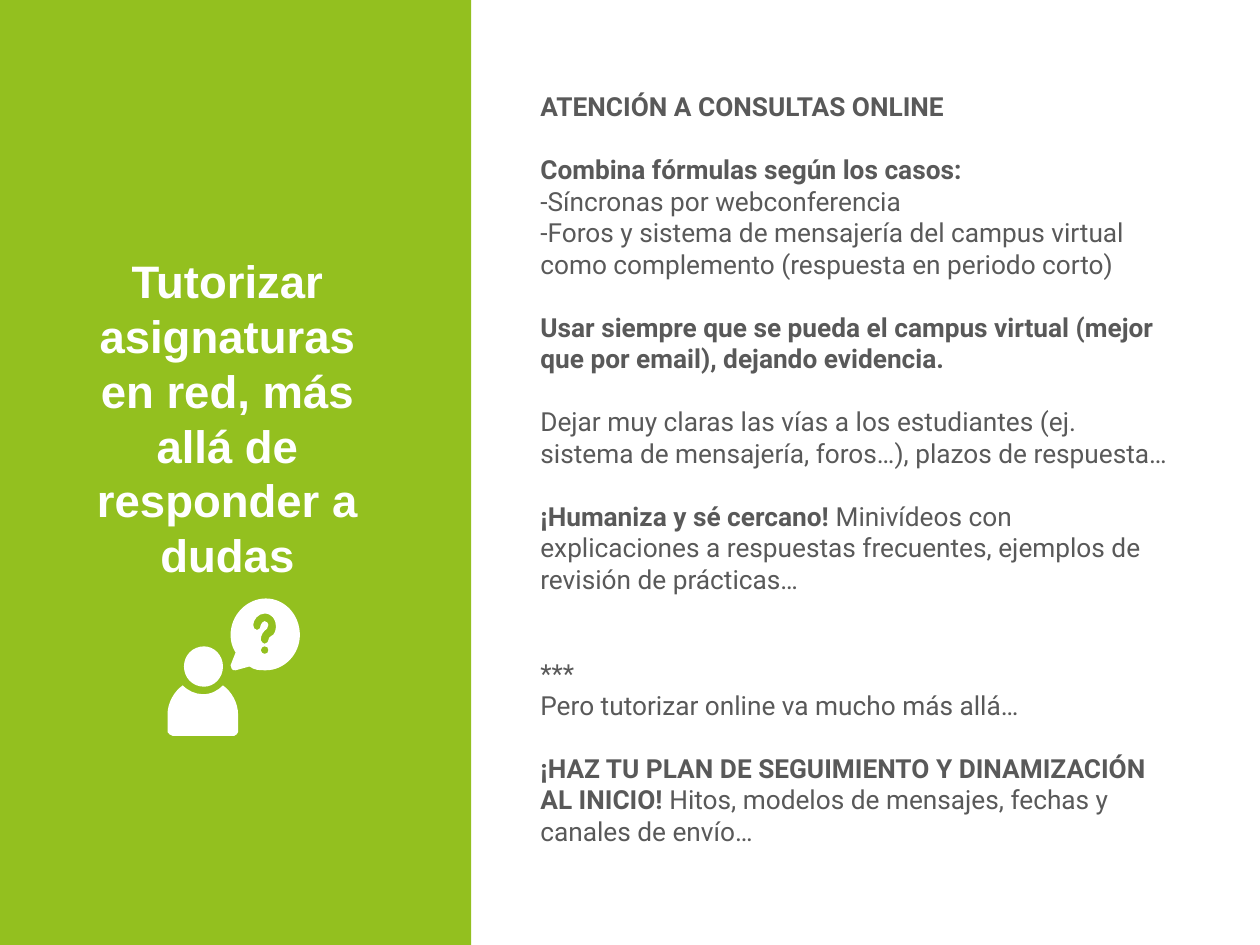
from dataclasses import dataclass

from lxml import etree
from pptx import Presentation
from pptx import util as u
from pptx.dml.color import RGBColor
from pptx.enum import shapes, text
from pptx.oxml import ns

Inches, Pt = u.Inches, u.Pt
GREEN, WHITE, GREY = "93C01F", "FFFFFF", "595959"
UNITS_PER_INCH = 1000


@dataclass(frozen=True)
class Style:
    font: str
    size: float
    color: str
    line_pitch: float


@dataclass(frozen=True)
class Line:
    """A paragraph: an optional bold lead, then regular text."""
    bold: str = ""
    regular: str = ""
    lines_before: int = 0


@dataclass(frozen=True)
class Contour:
    """A closed outline; segments hold 2 numbers (line) or 6 (Bezier curve)."""
    start: tuple[float, float]
    segments: list[tuple[float, ...]]


TITLE_STYLE = Style("Arial", 26, WHITE, 31.3)
BODY_STYLE = Style("Roboto", 15, GREY, 18)

TITLE = [Line("Tutorizar asignaturas en red, más allá de responder a dudas")]
BODY = [
    Line("ATENCIÓN A CONSULTAS ONLINE"),
    Line("Combina fórmulas según los casos:", lines_before=1),
    Line(regular="-Síncronas por webconferencia"),
    Line(regular="-Foros y sistema de mensajería del campus virtual como "
                 "complemento (respuesta en periodo corto)"),
    Line("Usar siempre que se pueda el campus virtual (mejor que por email), "
         "dejando evidencia.", lines_before=1),
    Line(regular="Dejar muy claras las vías a los estudiantes (ej. sistema de "
                 "mensajería, foros…), plazos de respuesta…", lines_before=1),
    Line("¡Humaniza y sé cercano! ",
         "Minivídeos con explicaciones a respuestas frecuentes, ejemplos de "
         "revisión de prácticas…", 1),
    Line(regular="***", lines_before=2),
    Line(regular="Pero tutorizar online va mucho más allá…"),
    Line("¡HAZ TU PLAN DE SEGUIMIENTO Y DINAMIZACIÓN AL INICIO! ",
         "Hitos, modelos de mensajes, fechas y canales de envío…", 1),
]

HEAD = Contour((1.62, 5.13), [
    (1.53, 5.13, 1.46, 5.2, 1.46, 5.29), (1.46, 5.38, 1.53, 5.45, 1.62, 5.45),
    (1.7, 5.45, 1.77, 5.38, 1.77, 5.29), (1.77, 5.2, 1.7, 5.13, 1.62, 5.13),
])
QUESTION_HOOK = Contour((2.1, 4.87), [
    (2.16, 4.87, 2.19, 4.92, 2.19, 4.97), (2.19, 5, 2.18, 5.04, 2.15, 5.05),
    (2.14, 5.05, 2.13, 5.07, 2.13, 5.08), (2.13, 5.09, 2.12, 5.11, 2.1, 5.11),
    (2.09, 5.11, 2.07, 5.09, 2.07, 5.08), (2.07, 5.04, 2.09, 5.01, 2.12, 4.99),
    (2.13, 4.98, 2.13, 4.98, 2.13, 4.96), (2.13, 4.95, 2.12, 4.93, 2.1, 4.93),
    (2.09, 4.93, 2.07, 4.95, 2.07, 4.96), (2.07, 4.98, 2.06, 5, 2.04, 5),
    (2.02, 5, 2.01, 4.98, 2.01, 4.96), (2.01, 4.92, 2.05, 4.87, 2.1, 4.87),
])
QUESTION_DOT = Contour((2.1, 5.13), [
    (2.12, 5.13, 2.13, 5.14, 2.13, 5.16), (2.13, 5.18, 2.12, 5.19, 2.1, 5.19),
    (2.09, 5.19, 2.07, 5.18, 2.07, 5.16), (2.07, 5.14, 2.09, 5.13, 2.1, 5.13),
])
BUBBLE = Contour((2.11, 4.75), [
    (1.96, 4.75, 1.83, 4.88, 1.83, 5.04), (1.83, 5.09, 1.84, 5.13, 1.87, 5.18),
    (1.83, 5.28),
    (1.83, 5.29, 1.83, 5.3, 1.84, 5.31), (1.84, 5.32, 1.86, 5.32, 1.87, 5.32),
    (1.98, 5.29),
    (2.02, 5.32, 2.06, 5.32, 2.11, 5.32), (2.26, 5.32, 2.38, 5.19, 2.38, 5.04),
    (2.38, 4.88, 2.26, 4.75, 2.11, 4.75),
])
TORSO = Contour((1.45, 5.44), [
    (1.38, 5.49, 1.33, 5.58, 1.33, 5.67), (1.33, 5.81),
    (1.34, 5.82, 1.35, 5.84, 1.37, 5.84), (1.86, 5.84),
    (1.87, 5.84, 1.89, 5.82, 1.89, 5.81), (1.89, 5.67),
    (1.89, 5.58, 1.84, 5.49, 1.77, 5.44), (1.73, 5.48, 1.68, 5.51, 1.61, 5.51),
    (1.55, 5.51, 1.49, 5.48, 1.45, 5.44),
])


def rgb(color: str) -> RGBColor:
    return RGBColor.from_string(color)


def paint(shape, color: str) -> None:
    shape.shadow.inherit = False
    shape.fill.solid()
    shape.fill.fore_color.rgb = rgb(color)
    shape.line.fill.background()


def add_panel(slide, left: float, top: float, width: float, height: float,
              color: str) -> None:
    panel = slide.shapes.add_shape(shapes.MSO_SHAPE.RECTANGLE, Inches(left),
                                   Inches(top), Inches(width), Inches(height))
    paint(panel, color)


def scaled(point: tuple[float, ...]) -> tuple[int, int]:
    x, y = point
    return round(x * UNITS_PER_INCH), round(y * UNITS_PER_INCH)


def bend_lines(shape, contours: list[Contour]) -> None:
    """Turn the straight segments that stand for curves into Bezier curves."""
    anchors = [scaled(point) for contour in contours for point in
               (contour.start, *(segment[-2:] for segment in contour.segments))]
    left, top = (min(values) for values in zip(*anchors))
    segments = [segment for contour in contours for segment in contour.segments]
    lines = list(shape._element.iter(ns.qn("a:lnTo")))
    for line, segment in zip(lines, segments):
        if len(segment) == 6:
            curve = etree.Element(ns.qn("a:cubicBezTo"))
            for start in (0, 2, 4):
                x, y = scaled(segment[start:start + 2])
                etree.SubElement(curve, ns.qn("a:pt"), x=str(x - left), y=str(y - top))
            line.getparent().replace(line, curve)


def add_outline(parent, contours: list[Contour], color: str) -> None:
    builder = parent.shapes.build_freeform(*scaled(contours[0].start),
                                           scale=Inches(1) / UNITS_PER_INCH)
    for index, contour in enumerate(contours):
        if index:
            builder.move_to(*scaled(contour.start))
        builder.add_line_segments([scaled(segment[-2:]) for segment in contour.segments],
                                  close=True)
    shape = builder.convert_to_shape()
    bend_lines(shape, contours)
    paint(shape, color)


def add_text(slide, left: float, top: float, width: float, height: float,
             lines: list[Line], style: Style, align) -> None:
    box = slide.shapes.add_textbox(Inches(left), Inches(top),
                                   Inches(width), Inches(height))
    frame = box.text_frame
    frame.word_wrap = True
    for index, line in enumerate(lines):
        paragraph = frame.add_paragraph() if index else frame.paragraphs[0]
        paragraph.alignment = align
        paragraph.line_spacing = Pt(style.line_pitch)
        paragraph.space_before = Pt(line.lines_before * style.line_pitch)
        for words, bold in ((line.bold, True), (line.regular, False)):
            if words:
                run = paragraph.add_run()
                run.text = words
                run.font.name = style.font
                run.font.size = Pt(style.size)
                run.font.bold = bold
                run.font.color.rgb = rgb(style.color)


def main() -> None:
    presentation = Presentation()
    presentation.slide_width = Inches(10)
    presentation.slide_height = Inches(7.5)
    slide = presentation.slides.add_slide(presentation.slide_layouts[6])

    # Green side panel and title
    add_panel(slide, 0, 0, 3.74, 7.5, GREEN)
    add_text(slide, 0.64, 1.96, 2.33, 2.29, TITLE, TITLE_STYLE, text.PP_ALIGN.CENTER)

    # Icon: person with a question bubble
    icon = slide.shapes.add_group_shape()
    for contours in ([HEAD], [QUESTION_HOOK, QUESTION_DOT, BUBBLE], [TORSO]):
        add_outline(icon, contours, WHITE)

    # Advice on the right
    add_text(slide, 4.19, 0.67, 5.21, 6.6, BODY, BODY_STYLE, text.PP_ALIGN.LEFT)

    presentation.save("out.pptx")


if __name__ == "__main__":
    main()
